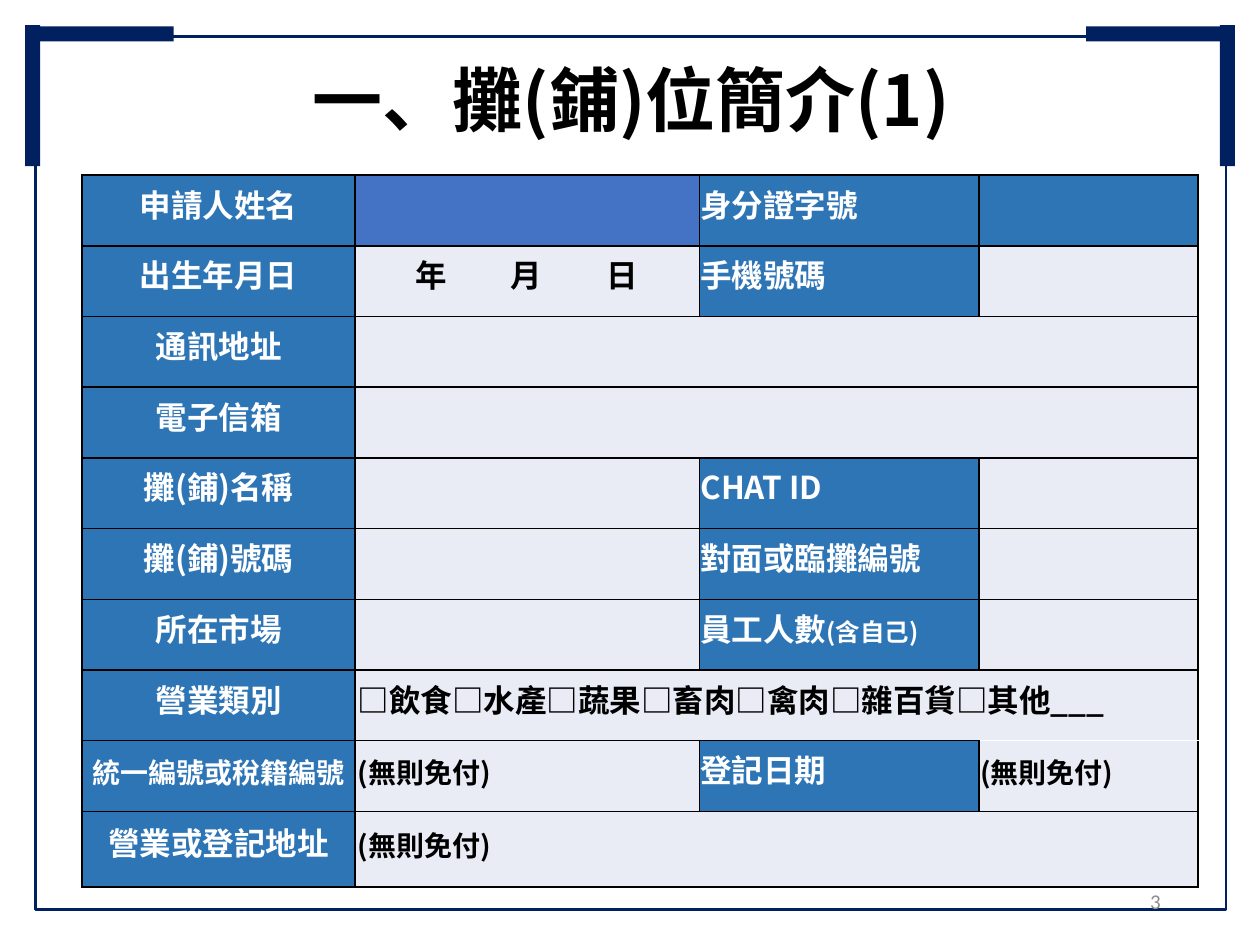
"""Build the stall profile form slide."""
import pptx
import pptx.dml.color
import pptx.enum.shapes
import pptx.enum.text
import pptx.oxml
import pptx.oxml.ns
import pptx.util

Pt = pptx.util.Pt
Align = pptx.enum.text.PP_ALIGN
Mid = pptx.enum.text.MSO_ANCHOR.MIDDLE
CJK = "Noto Sans CJK SC"
HUES = {"navy": "002060", "blue": "2E75B6", "bright": "4472C4", "pale": "E9EBF5",
        "white": "FFFFFF", "black": "000000", "gray": "8C8C8C"}
WIDE, TALL = 720, 540
COLS = [156.2, 196.6, 159.8, 125.3]
HIGHS = [40.4] * 9 + [43.2]
NONE = [("(無則免付)", 16)]
ROWS = [
    [[("申請人姓名", 18)], [], [("身分證字號", 18)], []],
    [[("出生年月日", 18)], [("\t年\t月\t日", 18)], [("手機號碼", 18)], []],
    [[("通訊地址", 18)], []],
    [[("電子信箱", 18)], []],
    [[("攤(鋪)名稱", 18)], [], [("CHAT ID", 18)], []],
    [[("攤(鋪)號碼", 18)], [], [("對面或臨攤編號", 18)], []],
    [[("所在市場", 18)], [], [("員工人數", 18), ("(含自己)", 14)], []],
    [[("營業類別", 18)], [("□飲食□水產□蔬果□畜肉□禽肉□雜百貨□其他___", 18)]],
    [[("統一編號或稅籍編號", 16)], NONE, [("登記日期", 18)], NONE],
    [[("營業或登記地址", 18)], NONE],
]
TABS = [33, 87, 142]


class Deck:
    """Holds the style and the current slide."""

    def __init__(self, prs):
        self.slide = prs.slides.add_slide(prs.slide_layouts[5])
        self.shapes = self.slide.shapes

    def hue(self, name):
        return pptx.dml.color.RGBColor.from_string(HUES[name])

    def paint(self, fill, name):
        fill.solid()
        fill.fore_color.rgb = self.hue(name)

    def run(self, para, text, size, hue, face=CJK, bold=True):
        run = para.add_run()
        run.text = text
        font = run.font
        font.size, font.bold, font.name = Pt(size), bold, face
        font.color.rgb = self.hue(hue)
        east = pptx.oxml.parse_xml(
            f'<a:ea {pptx.oxml.ns.nsdecls("a")} typeface="{face}"/>')
        run._r.get_or_add_rPr().append(east)

    def rect(self, x, y, w, h, fill=None, line=None):
        kind = pptx.enum.shapes.MSO_SHAPE.RECTANGLE
        box = self.shapes.add_shape(kind, Pt(x), Pt(y), Pt(w), Pt(h))
        box.shadow.inherit = False
        if fill:
            self.paint(box.fill, fill)
        else:
            box.fill.background()
        if line:
            box.line.color.rgb, box.line.width = self.hue(line), Pt(1.5)
        else:
            box.line.fill.background()

    def frame(self):
        self.rect(20.2, 20.9, 680.4, 499, line="navy")
        for x, y, w, h in [(18.7, 15.1, 80.6, 8.6), (14.4, 14.4, 8.6, 80.6)]:
            for left in (x, WIDE - x - w):
                self.rect(left, y, w, h, fill="navy")

    def title(self, text):
        box = self.shapes.title
        box.left, box.top, box.width, box.height = Pt(36.7), Pt(20.2), Pt(648), Pt(72.7)
        box.text_frame.vertical_anchor = Mid
        para = box.text_frame.paragraphs[0]
        para.alignment = Align.CENTER
        self.run(para, text, 40, "black")

    def number(self, text):
        box = self.shapes.add_textbox(Pt(508.3), Pt(500.4), Pt(162), Pt(28.8))
        box.text_frame.word_wrap = True
        box.text_frame.vertical_anchor = Mid
        para = box.text_frame.paragraphs[0]
        para.alignment = Align.RIGHT
        self.run(para, text, 12, "gray", "Calibri", False)

    def edges(self, cell, top="black"):
        props = cell._tc.get_or_add_tcPr()
        for side, name in zip("LRTB", ("black", "black", top, "black")):
            props.append(pptx.oxml.parse_xml(
                f'<a:ln{side} {pptx.oxml.ns.nsdecls("a")} w="12700"><a:solidFill>'
                f'<a:srgbClr val="{HUES[name]}"/></a:solidFill></a:ln{side}>'))

    def tabs(self, para):
        stops = "".join(f'<a:tab pos="{Pt(at)}" algn="l"/>' for at in TABS)
        para._p.get_or_add_pPr().append(pptx.oxml.parse_xml(
            f'<a:tabLst {pptx.oxml.ns.nsdecls("a")}>{stops}</a:tabLst>'))

    def label(self, cell, runs, col, just):
        cell.vertical_anchor = Mid
        cell.margin_left = cell.margin_right = Pt(1.5 if col < 2 else 0.7)
        cell.margin_top = cell.margin_bottom = 0
        para = cell.text_frame.paragraphs[0]
        if "\t" in runs[0][0]:
            self.tabs(para)
        para.line_spacing = Pt(18)
        side = Align.JUSTIFY if just else Align.LEFT
        para.alignment = Align.CENTER if col == 0 else side
        for text, size in runs:
            self.run(para, text, size, "black" if col % 2 else "white")

    def form(self, rows):
        grid = self.shapes.add_table(len(rows), len(COLS), Pt(46.8), Pt(100.1),
                                     Pt(sum(COLS)), Pt(sum(HIGHS))).table
        for col, wide in zip(grid.columns, COLS):
            col.width = Pt(wide)
        for row, high in zip(grid.rows, HIGHS):
            row.height = Pt(high)
        for r, row in enumerate(rows):
            for c in range(len(COLS)):
                cell = grid.cell(r, c)
                self.edges(cell, "white" if (r, c) == (8, 3) else "black")
                fill = "pale" if c % 2 or len(row) == 2 and c else "blue"
                if r == 0:
                    fill = "bright" if c == 1 else "blue"
                self.paint(cell.fill, fill)
                if c < len(row) and row[c]:
                    self.label(cell, row[c], c, 6 <= r <= 8)
            if len(row) == 2:
                grid.cell(r, 1).merge(grid.cell(r, 3))


def main():
    prs = pptx.Presentation()
    prs.slide_width, prs.slide_height = Pt(WIDE), Pt(TALL)
    deck = Deck(prs)
    deck.frame()
    deck.number("3")
    deck.title("一、攤(鋪)位簡介(1)")
    deck.form(ROWS)
    prs.save("out.pptx")


if __name__ == "__main__":
    main()
